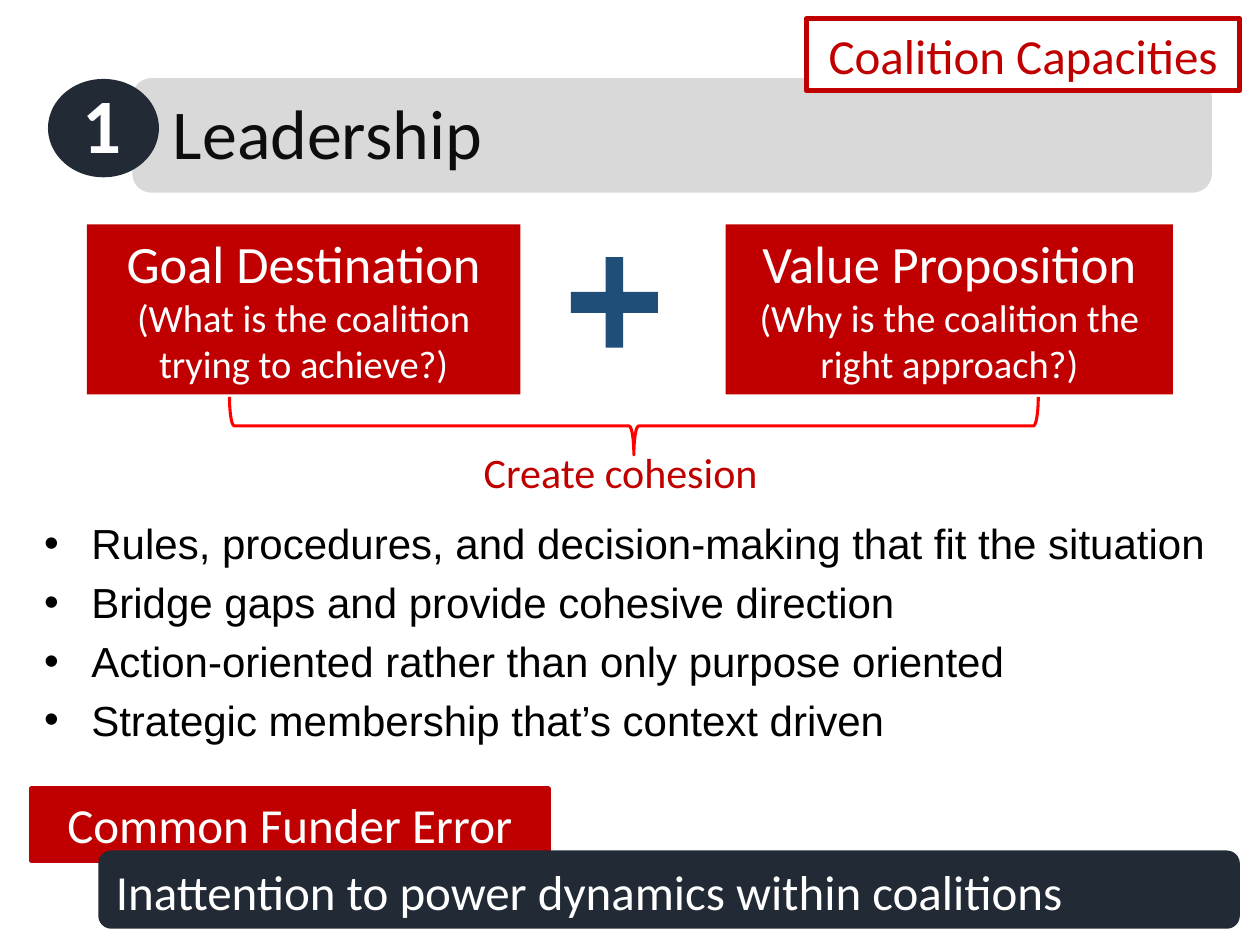
from pptx import Presentation
from pptx.dml.color import RGBColor
from pptx.enum import shapes, text
from pptx.util import Pt

COLORS = {
    "red": "C00000",
    "brace": "FF0000",
    "navy": "222A35",
    "blue": "1F4E79",
    "gray": "D9D9D9",
    "ink": "0D0D0D",
    "black": "000000",
    "white": "FFFFFF",
}
SHAPE = shapes.MSO_SHAPE
LEFT, CENTER = text.PP_ALIGN.LEFT, text.PP_ALIGN.CENTER


def rgb(name):
    return RGBColor.from_string(COLORS[name])


def add_block(slide, kind, box, fill=None, line=None, line_width=3):
    shape = slide.shapes.add_shape(kind, *map(Pt, box))
    shape.shadow.inherit = False
    if fill:
        shape.fill.solid()
        shape.fill.fore_color.rgb = rgb(fill)
    else:
        shape.fill.background()
    if line:
        shape.line.color.rgb = rgb(line)
        shape.line.width = Pt(line_width)
    else:
        shape.line.fill.background()
    return shape


def write(shape, lines, color, align=LEFT, font="Calibri", bold=False):
    """Fill a shape with one paragraph for each (wording, size) pair."""
    frame = shape.text_frame
    frame.word_wrap = True
    frame.auto_size = text.MSO_AUTO_SIZE.NONE
    frame.vertical_anchor = text.MSO_ANCHOR.TOP
    for index, (wording, size) in enumerate(lines):
        paragraph = frame.add_paragraph() if index else frame.paragraphs[0]
        paragraph.alignment = align
        run = paragraph.add_run()
        run.text = wording
        run.font.name = font
        run.font.size = Pt(size)
        run.font.bold = bold
        run.font.color.rgb = rgb(color)


def add_label(slide, box, lines, color, **style):
    write(slide.shapes.add_textbox(*map(Pt, box)), lines, color, **style)


def place(shape, box):
    shape.left, shape.top, shape.width, shape.height = map(Pt, box)


def add_heading(slide, box, number, wording):
    left, top, width, height = box
    bar_left = left + 48.2
    add_block(slide, SHAPE.ROUNDED_RECTANGLE,
              (bar_left, top, width - 48.2, height), "gray")
    add_block(slide, SHAPE.OVAL, (left, top + 0.5, 63.4, 56.2), "navy")
    add_label(slide, (left + 10.8, top - 4.5, 40.3, 60.5), [(number, 44)],
              "white", align=CENTER, bold=True)
    title = slide.shapes.title
    place(title, (bar_left + 16, top + 2.9, 602, 55.4))
    write(title, [(wording, 40)], "ink")
    # The title has to lie in front of the bar
    title.element.getparent().append(title.element)


def add_tag(slide, box, wording, fill, color):
    tag = add_block(slide, SHAPE.RECTANGLE, box, fill, "red")
    write(tag, [(wording, 28)], color, align=CENTER)


def add_equation(slide, box, terms, result):
    """Two boxes joined by a plus, with a brace down to their result."""
    left, top, width, height = box
    widths = (247.7, 255.6)
    lefts = (left, left + width - widths[1])
    for term_left, term_width, (name, question) in zip(lefts, widths, terms):
        term = add_block(slide, SHAPE.RECTANGLE,
                         (term_left, top, term_width, height), "red")
        write(term, [(name, 30), (question, 22)], "white", align=CENTER)

    plus = add_block(slide, SHAPE.CROSS,
                     (left + 276.5, top + 18.7, 49.7, 51.8), "blue")
    plus.adjustments[0] = 0.4

    # Upright frame, turned a quarter round its middle
    depth, span = 33.1, 462.2
    middle_x, middle_y = left + 312.5, top + height + 18
    brace = add_block(slide, SHAPE.RIGHT_BRACE,
                      (middle_x - depth / 2, middle_y - span / 2, depth, span),
                      line="brace", line_width=1.75)
    brace.rotation = 90
    add_label(slide, (left + 219.6, top + height + 26, 229, 36),
              [(result, 24)], "red")


def add_bullets(slide, box, items):
    body = slide.placeholders[1]
    place(body, box)
    write(body, [(item, 24) for item in items], "black", font="Arial")


def add_error(slide, box, heading, wording):
    left, top, width, height = box
    add_tag(slide, (left, top, 295.2, 41), heading, "red", "white")
    bar_left, bar_top = left + 38.2, top + 35.3
    add_block(slide, SHAPE.ROUNDED_RECTANGLE,
              (bar_left, bar_top, width - 38.2, height - 35.3), "navy")
    add_label(slide, (bar_left + 2.9, bar_top + 2.9, 659.5, 41),
              [(wording, 28)], "white")


def main():
    presentation = Presentation()
    presentation.slide_width, presentation.slide_height = Pt(720), Pt(540)
    slide = presentation.slides.add_slide(presentation.slide_layouts[1])

    add_heading(slide, (27.4, 44.6, 665.2, 65.5), "1", "Leadership")
    add_tag(slide, (460.8, 10.8, 247.7, 41), "Coalition Capacities",
            "white", "red")
    add_equation(slide, (49.7, 128.2, 620.6, 97.2), [
        ("Goal Destination", "(What is the coalition trying to achieve?)"),
        ("Value Proposition", "(Why is the coalition the right approach?)"),
    ], "Create cohesion")
    add_bullets(slide, (18, 292.3, 730, 167), [
        "Rules, procedures, and decision-making that fit the situation",
        "Bridge gaps and provide cohesive direction",
        "Action-oriented rather than only purpose oriented",
        "Strategic membership that’s context driven",
    ])
    add_error(slide, (18, 450.7, 690.5, 80), "Common Funder Error",
              "Inattention to power dynamics within coalitions")
    presentation.save("out.pptx")


if __name__ == "__main__":
    main()
